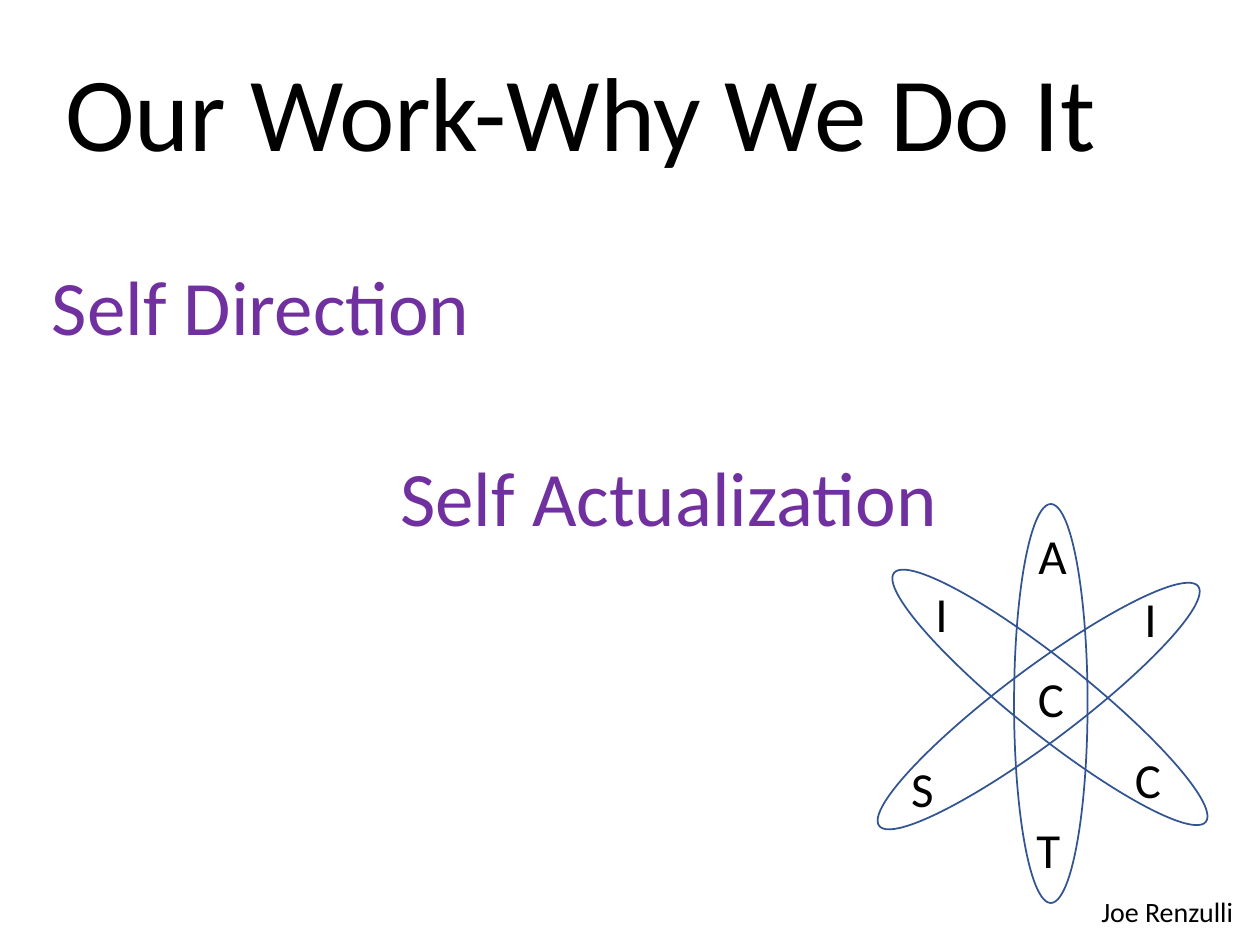
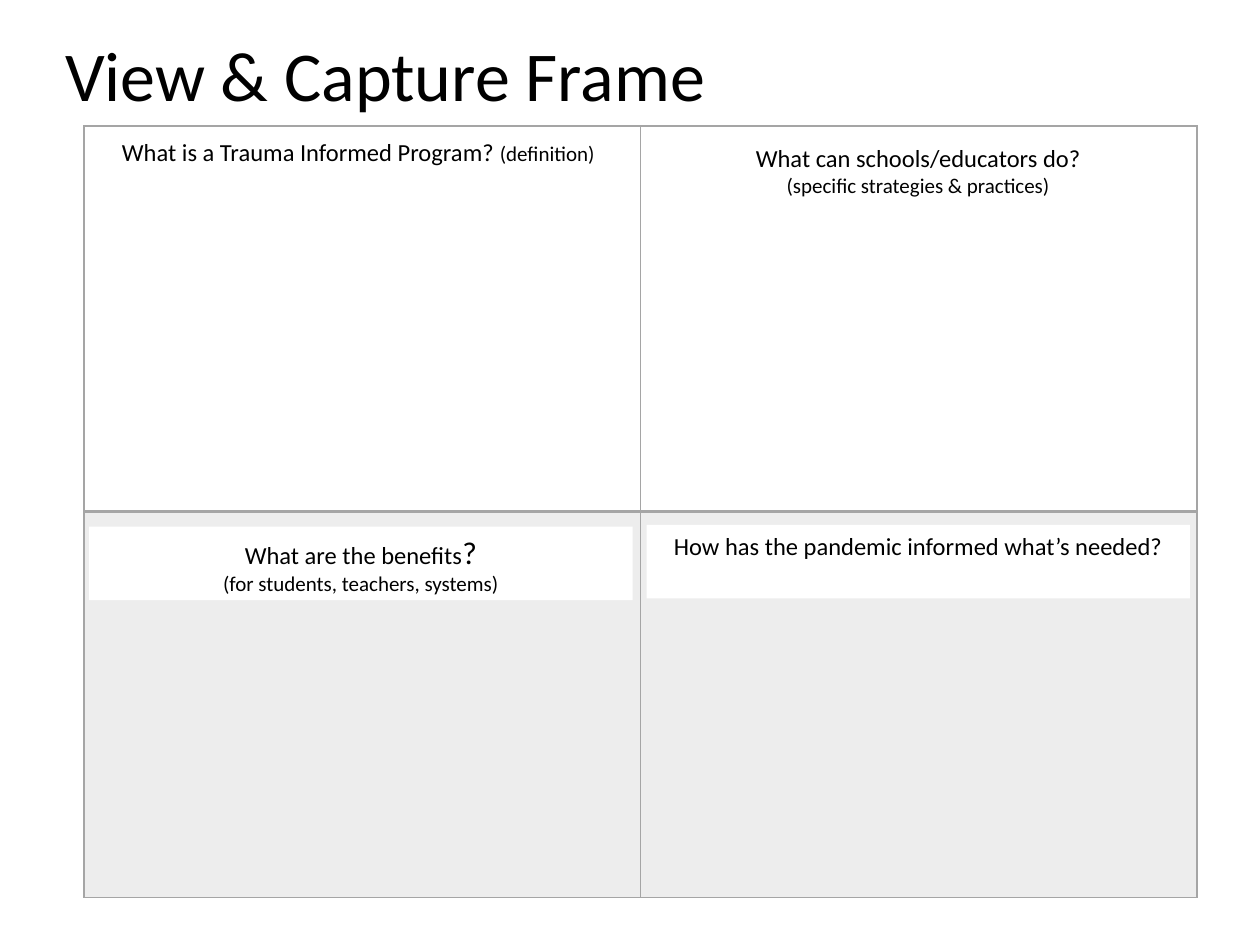
from lxml.etree import SubElement
from pptx import Presentation
from pptx.dml.color import RGBColor
from pptx.enum.shapes import MSO_SHAPE
from pptx.enum.text import MSO_ANCHOR, PP_ALIGN
from pptx.oxml.ns import qn
from pptx.util import Pt

BLACK = RGBColor(0, 0, 0)
WHITE = RGBColor(255, 255, 255)
PURPLE = RGBColor(0x70, 0x30, 0xA0)
BLUE = RGBColor(0x32, 0x54, 0x91)
GRAY = RGBColor(0xA5, 0xA5, 0xA5)
FONT = "Calibri"

# Title: text, size, box (left, top, width, height)
WHY = ("Our Work-Why We Do It", 60, (30, 8, 648, 118))
FRAME = ("View & Capture Frame", 40, (30, 26.5, 466, 37))

# Each paragraph is a list of (text, size) runs
GOALS = [[("Self Direction", 44)], [("Self Actualization", 44)]]
GOAL_BOX = (19.5, 150, 672, 312)
GOAL_INDENTS = (3, 202)
GOAL_GAP = 61.5

ORBIT = (42, 228)
ORBITS = [(600.5, 402, 0), (600, 398.5, 308.6), (593.5, 403.5, 53.1)]  # centre, turn
LETTER = (42, 41)
LETTERS = [
    ("C", 579.5, 378.5), ("I", 517, 330), ("T", 578, 465), ("A", 580.5, 296.5),
    ("C", 635, 425), ("I", 636.5, 332.5), ("S", 506, 430),
]
CREDIT = ("Joe Renzulli", 16)
CREDIT_BOX = (614, 507.5, 106, 27)

GRID = (48, 72, 636, 441)
PROMPT = (310.5, 42)
PROMPTS = [
    (49.5, 75, [[("What is a Trauma Informed Program? ", 14), ("(definition)", 12)]]),
    (369.5, 300, [[("How has the pandemic informed what’s needed?", 14)]]),
    (51, 301, [[("What are the benefits", 14), ("?", 18)],
               [("(for students, teachers, systems)", 12)]]),
    (369.5, 78, [[("What can schools/educators do?", 14)],
                 [("(specific strategies & practices)", 12)]]),
]


def points(box):
    return [Pt(value) for value in box]


def write(shape, lines, color=BLACK, align=PP_ALIGN.CENTER, anchor=MSO_ANCHOR.TOP,
          wrap=True, spacing=None, gap=0, indents=()):
    """Fill a shape with paragraphs, each a list of (text, size) runs."""
    frame = shape.text_frame
    frame.word_wrap = wrap
    frame.vertical_anchor = anchor
    for i, runs in enumerate(lines):
        para = frame.add_paragraph() if i else frame.paragraphs[0]
        para.alignment = align
        if spacing:
            para.line_spacing = spacing
        if i and gap:
            para.space_before = Pt(gap)
        if indents:
            para._p.get_or_add_pPr().set("marL", str(Pt(indents[i])))
        for text, size in runs:
            run = para.add_run()
            run.text = text
            run.font.name = FONT
            run.font.size = Pt(size)
            run.font.color.rgb = color


def label(slide, box, lines, **style):
    write(slide.shapes.add_textbox(*points(box)), lines, **style)


def begin(deck, text, size, box):
    slide = deck.slides.add_slide(deck.slide_layouts[5])
    title = slide.shapes.title
    title.left, title.top, title.width, title.height = points(box)
    write(title, [[(text, size)]], align=PP_ALIGN.LEFT,
          anchor=MSO_ANCHOR.MIDDLE, spacing=0.9)
    return slide


def draw(slide, kind, box, fill=None, line=None):
    shape = slide.shapes.add_shape(kind, *points(box))
    shape.shadow.inherit = False
    for part, color in ((shape.fill, fill), (shape.line.fill, line)):
        if color is None:
            part.background()
        else:
            part.solid()
            part.fore_color.rgb = color
    if line is not None:
        shape.line.width = Pt(1)
    return shape


def border(cell, **widths):
    props = cell._tc.get_or_add_tcPr()
    for side in "LRTB":
        line = SubElement(props, qn(f"a:ln{side}"), w=str(Pt(widths.get(side, 1))))
        fill = SubElement(line, qn("a:solidFill"))
        SubElement(fill, qn("a:srgbClr"), val=str(GRAY))


def tint(cell, percent):
    cell.fill.solid()
    cell.fill.fore_color.rgb = GRAY
    color = cell._tc.tcPr.find(qn("a:solidFill")).find(qn("a:srgbClr"))
    SubElement(color, qn("a:alpha"), val=str(percent * 1000))


def add_grid(slide):
    table = slide.shapes.add_table(2, 2, *points(GRID)).table
    table.first_row = table.horz_banding = False
    for col in range(2):
        top, low = table.cell(0, col), table.cell(1, col)
        border(top, B=2)
        top.fill.background()
        border(low, T=2)
        tint(low, 20)


def add_why(deck):
    slide = begin(deck, *WHY)
    label(slide, GOAL_BOX, GOALS, color=PURPLE, align=PP_ALIGN.LEFT,
          spacing=0.9, gap=GOAL_GAP, indents=GOAL_INDENTS)
    width, height = ORBIT
    for x, y, turn in ORBITS:
        box = (x - width / 2, y - height / 2, width, height)
        draw(slide, MSO_SHAPE.OVAL, box, line=BLUE).rotation = turn
    for text, x, y in LETTERS:
        label(slide, (x, y, *LETTER), [[(text, 28)]])
    label(slide, CREDIT_BOX, [[CREDIT]], wrap=False)


def add_frame(deck):
    slide = begin(deck, *FRAME)
    add_grid(slide)
    for x, y, lines in PROMPTS:
        write(draw(slide, MSO_SHAPE.RECTANGLE, (x, y, *PROMPT), fill=WHITE), lines)


def main():
    deck = Presentation()
    deck.slide_width, deck.slide_height = Pt(720), Pt(540)
    add_why(deck)
    add_frame(deck)
    deck.save("out.pptx")


if __name__ == "__main__":
    main()
